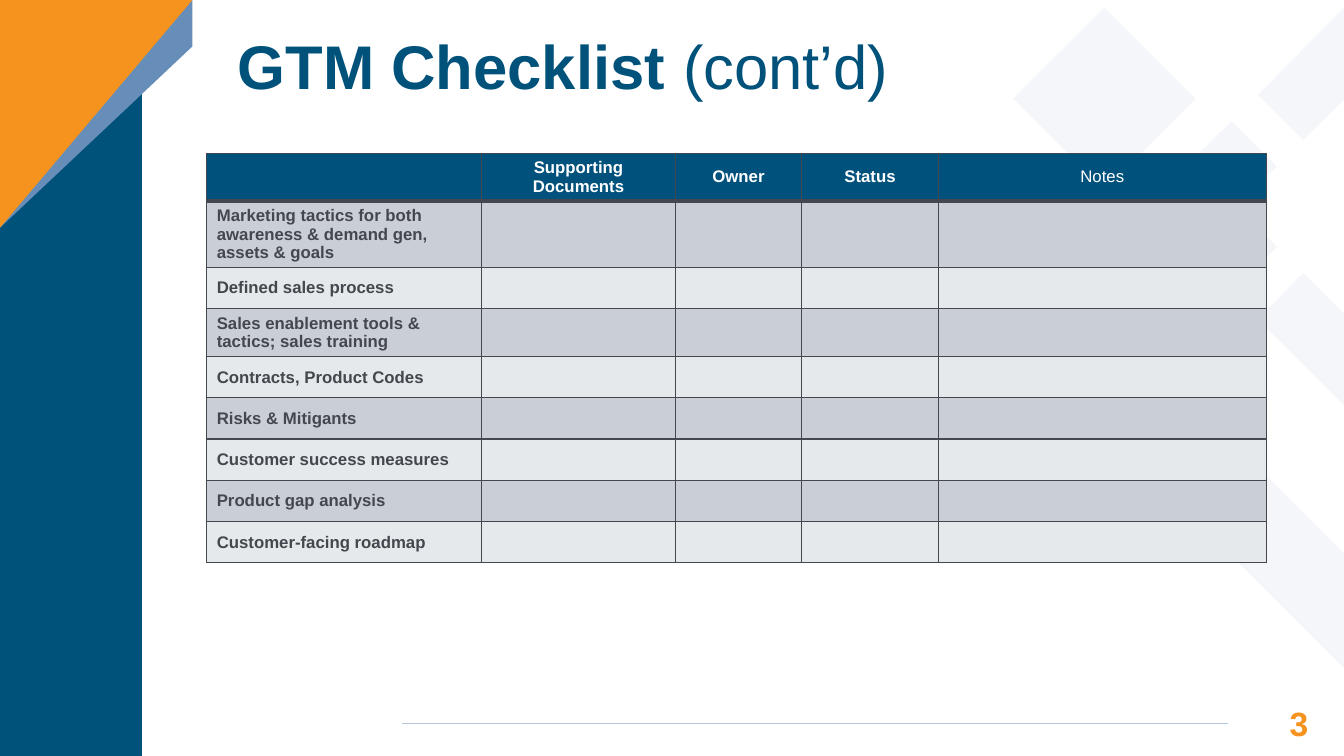
from typing import NamedTuple

from lxml.etree import SubElement
from pptx import Presentation
from pptx.dml.color import RGBColor
from pptx.enum.shapes import MSO_CONNECTOR, MSO_SHAPE
from pptx.enum.text import MSO_ANCHOR, MSO_AUTO_SIZE, PP_ALIGN
from pptx.oxml.ns import qn
from pptx.util import Cm, Pt

FONT = "Arial"
NAVY, ORANGE, STEEL = "00527B", "F6921E", "668EB8"
PALE, RULE, INK, WHITE = "E9EEF4", "B3C6DC", "44484E", "FFFFFF"
HEADER_FILL, BAND_FILLS = "00527C", ("CACFD6", "E6E9EC")
SLIDE_W, SLIDE_H = 33.87, 19.05


class Outline(NamedTuple):
    color: str
    points: list[tuple[float, float]]
    opacity: int = 100


class Column(NamedTuple):
    heading: str
    width: float
    bold: bool = True


BACKDROP = [
    Outline(PALE, [(31.04, 3.05), (28.85, 5.21), (31.04, 7.39),
                   (32.18, 6.22), (31.17, 5.21), (32.18, 4.19)], 49),
    Outline(PALE, [(27.94, 6.1), (25.53, 8.51), (SLIDE_W, 16.84),
                   (SLIDE_W, 13.94), (28.45, 8.51), (29.39, 7.54)], 49),
    Outline(PALE, [(32.84, 6.88), (31.7, 8.05), (SLIDE_W, 10.21), (SLIDE_W, 7.9)], 49),
    Outline(PALE, [(SLIDE_W, 0.2), (31.7, 2.39), (32.84, 3.53), (SLIDE_W, 2.51)], 49),
    Outline(NAVY, [(0, SLIDE_H), (3.58, SLIDE_H), (3.58, 0), (0, 0)]),
    Outline(STEEL, [(4.85, 0), (0, 0), (0, 5.74), (4.85, 1.17)]),
    Outline(ORANGE, [(4.85, 0), (0, 0), (0, 5.74)]),
]
COLUMNS = [
    Column("", 6.93),
    Column("Supporting Documents", 4.88),
    Column("Owner", 3.18),
    Column("Status", 3.45),
    Column("Notes", 8.26, bold=False),
]
TASKS = [
    "Marketing tactics for both awareness & demand gen, assets & goals",
    "Defined sales process",
    "Sales enablement tools & tactics; sales training",
    "Contracts, Product Codes",
    "Risks & Mitigants",
    "Customer success measures",
    "Product gap analysis",
    "Customer-facing roadmap",
]
ROW_H = 1.04


def rgb(color: str) -> RGBColor:
    return RGBColor.from_string(color)


def style_run(r, size: float, color: str, bold: bool) -> None:
    r.font.name, r.font.size, r.font.bold = FONT, Pt(size), bold
    r.font.color.rgb = rgb(color)


def clear_insets(tf) -> None:
    tf.margin_left = tf.margin_top = tf.margin_right = tf.margin_bottom = 0
    tf.word_wrap = True


def paint(sp, color: str, opacity: int = 100) -> None:
    sp.shadow.inherit = False
    sp.line.fill.background()
    sp.fill.solid()
    sp.fill.fore_color.rgb = rgb(color)
    if opacity < 100:
        clr = sp.fill._xPr.find(qn("a:solidFill"))[0]
        SubElement(clr, qn("a:alpha"), val=str(opacity * 1000))


def draw_outline(s, outline: Outline) -> None:
    start, *rest = [(Cm(x), Cm(y)) for x, y in outline.points]
    builder = s.shapes.build_freeform(*start)
    builder.add_line_segments(rest, close=True)
    paint(builder.convert_to_shape(), outline.color, outline.opacity)


def set_borders(cell, top: float, bottom: float) -> None:
    tc_pr = cell._tc.get_or_add_tcPr()
    for side, width in (("L", 1), ("R", 1), ("T", top), ("B", bottom)):
        ln = SubElement(tc_pr, qn(f"a:ln{side}"), w=str(Pt(width)))
        fill = SubElement(ln, qn("a:solidFill"))
        SubElement(fill, qn("a:srgbClr"), val=INK)


def fill_cell(cell, text: str, color: str, bold: bool, align: PP_ALIGN) -> None:
    cell.vertical_anchor = MSO_ANCHOR.MIDDLE
    if text:
        cell.text_frame.text = text
        p = cell.text_frame.paragraphs[0]
        p.alignment = align
        style_run(p.runs[0], 12, color, bold)


def draw_checklist(s) -> None:
    n_rows = len(TASKS) + 1
    table = s.shapes.add_table(
        n_rows, len(COLUMNS), Cm(5.21), Cm(3.86),
        Cm(sum(c.width for c in COLUMNS)), Cm(ROW_H * n_rows)).table
    table.horz_banding = False
    for table_col, column in zip(table.columns, COLUMNS):
        table_col.width = Cm(column.width)
    for i, row in enumerate(table.rows):
        row.height = Cm(ROW_H)
        for j, cell in enumerate(row.cells):
            set_borders(cell, 3 if i == 1 else 1, 3 if i == 0 else 1)
            cell.fill.solid()
            if i == 0:
                cell.fill.fore_color.rgb = rgb(HEADER_FILL)
                fill_cell(cell, COLUMNS[j].heading, WHITE, COLUMNS[j].bold, PP_ALIGN.CENTER)
            else:
                cell.fill.fore_color.rgb = rgb(BAND_FILLS[(i - 1) % 2])
                fill_cell(cell, TASKS[i - 1] if j == 0 else "", INK, True, PP_ALIGN.LEFT)


def draw_title(s) -> None:
    title = s.shapes.title
    title.left, title.top, title.width, title.height = Cm(5.99), Cm(0.89), Cm(24.33), Cm(1.73)
    tf = title.text_frame
    clear_insets(tf)
    tf.auto_size = MSO_AUTO_SIZE.NONE
    tf.vertical_anchor = MSO_ANCHOR.MIDDLE
    p = tf.paragraphs[0]
    p.alignment, p.line_spacing = PP_ALIGN.LEFT, 0.9
    for text, bold in (("GTM Checklist ", True), ("(cont’d)", False)):
        r = p.add_run()
        r.text = text
        style_run(r, 44, NAVY, bold)


def draw_footer(s) -> None:
    line = s.shapes.add_connector(MSO_CONNECTOR.STRAIGHT, Cm(10.13), Cm(18.24), Cm(30.94), Cm(18.24))
    line.line.color.rgb = rgb(RULE)
    line.line.width = Pt(0.82)
    SubElement(line._element.spPr, qn("a:effectLst"))

    tf = s.shapes.add_textbox(Cm(30.94), Cm(17.53), Cm(2.03), Cm(0.97)).text_frame
    clear_insets(tf)
    tf.text = "3"
    p = tf.paragraphs[0]
    p.alignment, p.line_spacing = PP_ALIGN.RIGHT, 1.19
    style_run(p.runs[0], 24, ORANGE, True)


def main() -> None:
    prs = Presentation()
    prs.slide_width, prs.slide_height = Cm(SLIDE_W), Cm(SLIDE_H)
    s = prs.slides.add_slide(prs.slide_layouts[5])

    # Backdrop: pale bands, corner ribbon and side panel
    diamond = s.shapes.add_shape(MSO_SHAPE.DIAMOND, Cm(25.53), Cm(0.2), Cm(4.6), Cm(4.58))
    paint(diamond, PALE, 49)
    for outline in BACKDROP:
        draw_outline(s, outline)

    # Content
    draw_title(s)
    draw_checklist(s)
    draw_footer(s)
    prs.save("out.pptx")


if __name__ == "__main__":
    main()
